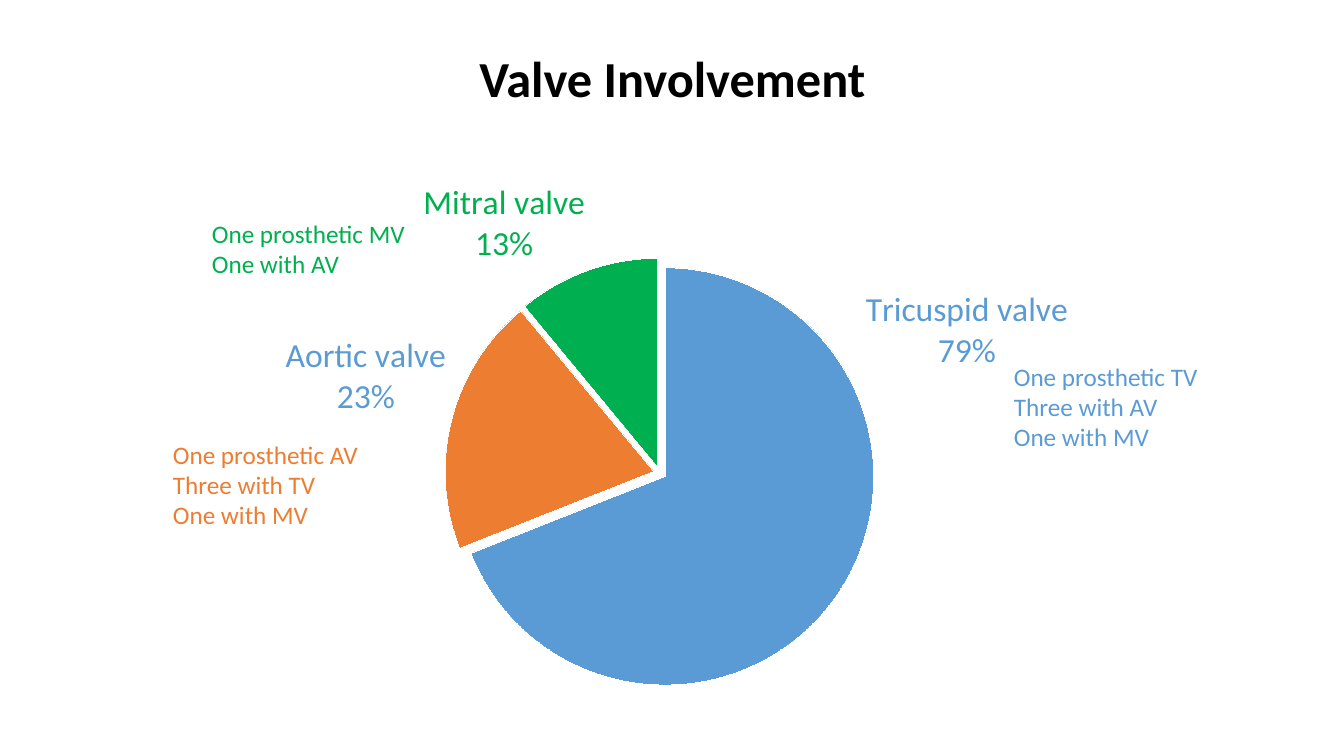
"""Build the valve involvement slide: a pie chart with a note beside each valve."""
from lxml import etree
from pptx import Presentation, util as u
from pptx.chart.data import CategoryChartData
from pptx.dml.color import RGBColor
from pptx.enum import chart as ch, text
from pptx.oxml.ns import qn

BLUE = RGBColor(0x5B, 0x9B, 0xD5)
ORANGE = RGBColor(0xED, 0x7D, 0x31)
GREEN = RGBColor(0x00, 0xB0, 0x50)
BLACK = RGBColor(0, 0, 0)
WHITE = RGBColor(255, 255, 255)
FONT = "Calibri"
PX = 914400 / 100.8

TITLE = ("Valve Involvement", (93, 29, 1159, 105))
CHART_BOX = (93, 164, 1159, 569)
PIE_BOX = (445, 258, 430, 430)
VALVES = [
    ("Tricuspid valve", 69, "79%", BLUE, BLUE, (23, -306)),
    ("Aortic valve", 20, "23%", ORANGE, BLUE, None),
    ("Mitral valve", 11, "13%", GREEN, GREEN, None),
]
NOTES = [
    (["One prosthetic TV", "Three with AV", "One with MV"], (1004, 356, 207, 102), BLUE),
    (["One prosthetic MV", "One with AV"], (202, 213, 219, 72), GREEN),
    (["One prosthetic AV", "Three with TV", "One with MV"], (163, 434, 208, 102), ORANGE),
]


def emu(box):
    return [u.Emu(round(length * PX)) for length in box]


def style(font, size, color, bold=False):
    font.name, font.size, font.bold = FONT, u.Pt(size), bold
    font.color.rgb = color


def add_text(slide, lines, box, size, color, bold=False):
    frame = slide.shapes.add_textbox(*emu(box)).text_frame
    frame.text = "\n".join(lines)
    for paragraph in frame.paragraphs:
        style(paragraph.runs[0].font, size, color, bold)
    return frame


def value_element(name, value):
    element = etree.Element(qn(f"c:{name}"))
    element.set("val", str(value))
    return element


def manual_layout(settings):
    layout = etree.Element(qn("c:layout"))
    manual = etree.SubElement(layout, qn("c:manualLayout"))
    for name, value in settings.items():
        manual.append(value_element(name, value))
    return layout


def hide_leader_lines(series):
    labels = series._element.find(qn("c:dLbls"))
    for leader in labels.findall(qn("c:showLeaderLines")):
        labels.remove(leader)
    labels.append(value_element("showLeaderLines", 0))


def add_pie(slide):
    data = CategoryChartData()
    data.categories = [valve[0] for valve in VALVES]
    data.add_series("Series 1", [valve[1] for valve in VALVES])
    chart = slide.shapes.add_chart(ch.XL_CHART_TYPE.PIE, *emu(CHART_BOX), data).chart
    chart.has_legend = chart.has_title = False
    style(chart.font, 10, BLACK)
    plot = chart.plots[0]
    plot.vary_by_categories = True
    series = plot.series[0]
    left, top, width, height = CHART_BOX

    for index, (name, _, percent, fill, color, shift) in enumerate(VALVES):
        point = series.points[index]
        point.format.fill.solid()
        point.format.fill.fore_color.rgb = fill
        point.format.line.color.rgb = WHITE
        label = point.data_label
        label.text_frame.text = f"{name}\n{percent}"
        for paragraph in label.text_frame.paragraphs:
            style(paragraph.runs[0].font, 24, color)
        label.position = ch.XL_LABEL_POSITION.OUTSIDE_END
        if shift:
            offset = {"x": round(shift[0] / width, 2), "y": round(shift[1] / height, 2)}
            idx = chart._chartSpace.xpath(f".//c:dLbl/c:idx[@val='{index}']")[0]
            idx.addnext(manual_layout(offset))

    hide_leader_lines(series)
    series._element.find(qn("c:dPt")).addprevious(value_element("explosion", 3))

    x, y, w, h = PIE_BOX
    area = chart._chartSpace.find(".//" + qn("c:plotArea"))
    for layout in area.findall(qn("c:layout")):
        area.remove(layout)
    area.insert(0, manual_layout({
        "layoutTarget": "inner", "xMode": "edge", "yMode": "edge",
        "x": round((x - left) / width, 4), "y": round((y - top) / height, 4),
        "w": round(w / width, 4), "h": round(h / height, 4),
    }))


def main():
    presentation = Presentation()
    presentation.slide_width, presentation.slide_height = emu((1344, 756))
    slide = presentation.slides.add_slide(presentation.slide_layouts[6])
    slide.background.fill.solid()
    slide.background.fill.fore_color.rgb = WHITE

    heading, box = TITLE
    title = add_text(slide, [heading], box, 36, BLACK, bold=True)
    title.word_wrap = True
    title.vertical_anchor = text.MSO_ANCHOR.MIDDLE
    title.paragraphs[0].alignment = text.PP_ALIGN.CENTER
    title.paragraphs[0].line_spacing = 0.9

    add_pie(slide)
    for lines, box, color in NOTES:
        note = add_text(slide, lines, box, 18, color)
        note.word_wrap = False
        note.auto_size = text.MSO_AUTO_SIZE.SHAPE_TO_FIT_TEXT
    presentation.save("out.pptx")


if __name__ == "__main__":
    main()
